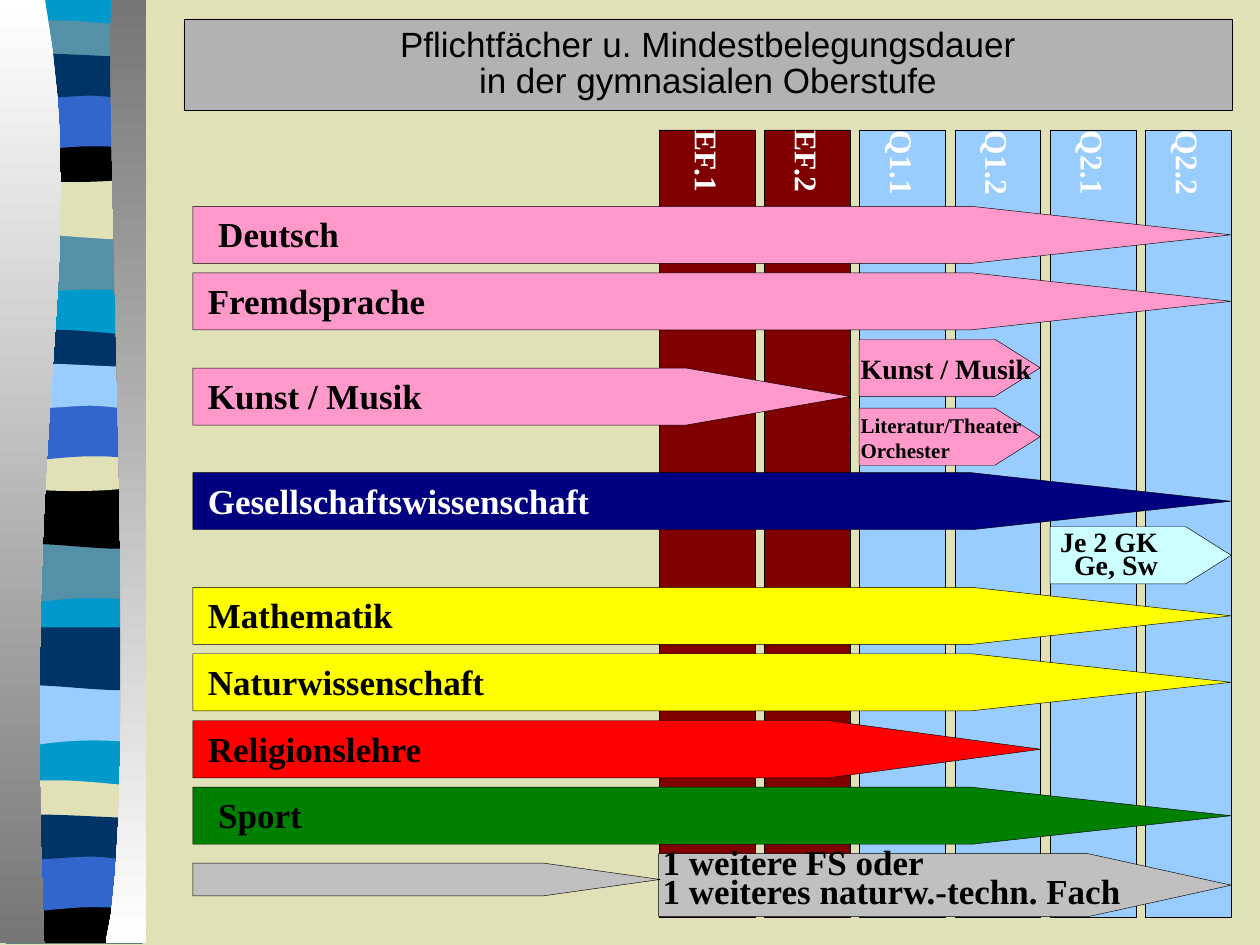
from dataclasses import dataclass

from pptx import Presentation
from pptx.dml.color import RGBColor
from pptx.enum.shapes import MSO_SHAPE
from pptx.enum.text import MSO_ANCHOR, PP_ALIGN
from pptx.util import Cm, Pt


@dataclass(frozen=True)
class Theme:
    sand: RGBColor = RGBColor.from_string("E1E1B7")
    steel: RGBColor = RGBColor.from_string("5490A8")
    cyan: RGBColor = RGBColor.from_string("0099CC")
    blue: RGBColor = RGBColor.from_string("3366CC")
    navy: RGBColor = RGBColor.from_string("003366")
    sky: RGBColor = RGBColor.from_string("99CCFF")
    dark_grey: RGBColor = RGBColor.from_string("767676")
    title_grey: RGBColor = RGBColor.from_string("B2B2B2")
    silver: RGBColor = RGBColor.from_string("C0C0C0")
    maroon: RGBColor = RGBColor.from_string("800000")
    pink: RGBColor = RGBColor.from_string("FF99CC")
    indigo: RGBColor = RGBColor.from_string("000080")
    yellow: RGBColor = RGBColor.from_string("FFFF00")
    red: RGBColor = RGBColor.from_string("FF0000")
    green: RGBColor = RGBColor.from_string("008000")
    ice: RGBColor = RGBColor.from_string("CCFFFF")
    black: RGBColor = RGBColor.from_string("000000")
    white: RGBColor = RGBColor.from_string("FFFFFF")
    label_size: Pt = Pt(20)
    column_size: Pt = Pt(18)
    note_size: Pt = Pt(16)
    small_size: Pt = Pt(12)
    sans: str = "Arial"
    serif: str = "Times New Roman"


theme = Theme()


def paint(shape, fill, outlined=True):
    shape.shadow.inherit = False
    shape.fill.solid()
    shape.fill.fore_color.rgb = fill
    if outlined:
        shape.line.color.rgb = theme.black
        shape.line.width = Pt(0.25)
    else:
        shape.line.fill.background()


def write(shape, lines, size, color=theme.black, font=theme.serif,
          align=PP_ALIGN.LEFT, spacing=1.0):
    """Fill the shape with one paragraph whose lines are split by line breaks."""
    frame = shape.text_frame
    frame.word_wrap = True
    frame.margin_left = frame.margin_right = Cm(0.13)
    frame.margin_top = frame.margin_bottom = Cm(0.13)
    paragraph = frame.paragraphs[0]
    paragraph.alignment = align
    paragraph.line_spacing = spacing
    for index, line in enumerate(lines):
        if index:
            paragraph.add_line_break()
        run = paragraph.add_run()
        run.text = line
        run.font.size = size
        run.font.name = font
        run.font.bold = font == theme.serif
        run.font.color.rgb = color


presentation = Presentation()
presentation.slide_width, presentation.slide_height = Cm(25.4), Cm(19.05)
slide = presentation.slides.add_slide(presentation.slide_layouts[6])
slide.background.fill.solid()
slide.background.fill.fore_color.rgb = theme.sand
shapes = slide.shapes

# Ribbon outlines: a start point, then lines (one point) and Bézier curves (three points)
swing = [[(2.75, 0)], [(2.75, 1.19)], [(0.84, 1), (0.46, 1.4), (0, 1.19)], [(0, 0)]]
sag = [[(2.75, 0)], [(2.75, 1.19)], [(2.29, 1.4), (0.84, 1.07), (0, 1.19)], [(0, 0)]]
arch = [[(2.75, 0.13)], [(2.75, 0.74)], [(2.29, 0.84), (0.46, 0.84), (0, 0.74)], [(0, 0.13)],
        [(0.18, 0), (0.61, 0), (1.07, 0)], [(1.52, 0), (2.39, 0.1), (2.75, 0.13)]]
bowl = [[(2.75, 0)], [(2.75, 0.81)], [(2.29, 0.97), (0.46, 0.97), (0, 0.81)], [(0, 0)],
        [(1.68, 0.13), (2.16, 0), (2.75, 0)]]
hump = [[(2.75, 0)], [(2.75, 1.19)], [(2.32, 1.07), (2.13, 1.07), (1.68, 1.07)],
        [(1.22, 1.07), (0.41, 1.19), (0, 1.19)], [(0, 0)]]
ripple = [[(2.75, 0.05)], [(2.75, 0.84)], [(2.57, 0.97), (2.16, 0.84), (1.7, 0.84)],
          [(1.24, 0.84), (0.28, 0.97), (0, 0.84)], [(0, 0.05)],
          [(0.38, -0.08), (1.88, 0.05), (2.34, 0.05)]]
foot = [[(2.75, 0)], [(2.75, 0.94)], [(0, 0.94)], [(0, 0)],
        [(1.68, 0.13), (2.16, 0), (2.75, 0)]]
left_edge = [[(0.91, 0)], [(1.83, 5.49), (0.43, 7.52), (0.89, 19.02)], [(0, 19.02)], [(0, 0)]]
right_edge = [[(2.24, 0)], [(2.13, 3.18), (2.82, 16.41), (2.13, 19.02)], [(2.95, 19.02)],
              [(2.95, 0)]]

ribbon = shapes.add_shape(MSO_SHAPE.RECTANGLE, Cm(0.12), 0, Cm(2.75), Cm(19.02))
paint(ribbon, theme.cyan, outlined=False)

# left, top, outline, colour, lower colour of a gradient
ribbon_parts = [
    (0.12, 4.7, swing, theme.steel, None),
    (0.12, 3.56, sag, theme.sand, None),
    (0.12, 0.41, arch, theme.steel, None),
    (0.12, 2.74, bowl, theme.black, None),
    (0.12, 1.88, hump, theme.blue, None),
    (0.12, 1.09, ripple, theme.navy, None),
    (0.12, 10.92, swing, theme.steel, None),
    (0.12, 9.8, sag, theme.black, None),
    (0.12, 6.65, arch, theme.navy, None),
    (0.12, 8.97, bowl, theme.sand, None),
    (0.12, 8.13, hump, theme.blue, None),
    (0.12, 7.34, ripple, theme.sky, None),
    (0.12, 13.79, swing, theme.sky, None),
    (0.12, 12.65, sag, theme.navy, None),
    (0.12, 15.73, arch, theme.sand, None),
    (0.12, 18.08, foot, theme.black, None),
    (0.12, 17.22, hump, theme.blue, None),
    (0.12, 16.43, ripple, theme.navy, None),
    (0, 0, left_edge, theme.white, theme.dark_grey),
    (0, 0, right_edge, theme.dark_grey, theme.white),
]
for left, top, outline, color, lower_color in ribbon_parts:
    points = list(outline[0])
    for segment in outline[1:]:
        if len(segment) == 1:
            points += segment
            continue
        controls = [points[-1], *segment]
        for step in range(1, 17):
            t = step / 16
            weights = ((1 - t) ** 3, 3 * t * (1 - t) ** 2, 3 * t * t * (1 - t), t ** 3)
            points.append(tuple(sum(weight * point[axis] for weight, point
                                    in zip(weights, controls)) for axis in (0, 1)))
    corners = [(Cm(left + x), Cm(top + y)) for x, y in points]
    builder = shapes.build_freeform(*corners[0])
    builder.add_line_segments(corners[1:], close=True)
    part = builder.convert_to_shape()
    paint(part, color, outlined=False)
    if lower_color is not None:
        part.fill.gradient()
        part.fill.gradient_angle = 270
        for stop, stop_color in zip(part.fill.gradient_stops, (color, lower_color)):
            stop.color.rgb = stop_color

title = shapes.add_shape(MSO_SHAPE.RECTANGLE, Cm(3.71), Cm(0.38), Cm(21.13), Cm(1.85))
paint(title, theme.title_grey)
title.text_frame.vertical_anchor = MSO_ANCHOR.MIDDLE
write(title, ["Pflichtfächer u. Mindestbelegungsdauer", "in der gymnasialen Oberstufe"],
      theme.label_size, font=theme.sans, align=PP_ALIGN.CENTER, spacing=0.85)

# Half-year columns
half_years = ["EF.1", "EF.2", "Q1.1", "Q1.2", "Q2.1", "Q2.2"]
column_right = 24.82
column_pitch = 1.92
label_length, label_height = 2.2, 0.97
for index, half_year in enumerate(half_years):
    width = 1.93 if index == 0 else 1.73
    left = column_right - column_pitch * (5 - index) - width
    column = shapes.add_shape(MSO_SHAPE.RECTANGLE, Cm(left), Cm(2.62), Cm(width), Cm(15.88))
    paint(column, theme.maroon if half_year.startswith("EF") else theme.sky)
    label = shapes.add_textbox(Cm(left + width / 2 + 0.03 - label_length / 2),
                               Cm(2.51 + (label_length - label_height) / 2),
                               Cm(label_length), Cm(label_height))
    label.rotation = 90
    write(label, [half_year], theme.column_size, theme.white)

# Subject arrows: left, top, width, height, colour
arrows = [
    (3.89, 4.16, 20.93, 1.15, theme.pink),
    (3.89, 5.5, 20.93, 1.15, theme.pink),
    (3.89, 7.42, 13.25, 1.15, theme.pink),
    (3.89, 9.53, 20.93, 1.15, theme.indigo),
    (3.89, 11.84, 20.93, 1.15, theme.yellow),
    (3.89, 13.18, 20.93, 1.15, theme.yellow),
    (3.89, 14.53, 17.09, 1.15, theme.red),
    (3.89, 15.87, 20.93, 1.15, theme.green),
    (17.32, 6.84, 3.65, 1.15, theme.pink),
    (17.32, 8.23, 3.65, 1.15, theme.pink),
    (21.17, 10.62, 3.65, 1.15, theme.ice),
    (13.28, 17.21, 11.54, 1.27, theme.silver),
    (3.89, 17.4, 9.42, 0.66, theme.silver),
]
for left, top, width, height, color in arrows:
    arrow = shapes.add_shape(MSO_SHAPE.PENTAGON, Cm(left), Cm(top), Cm(width), Cm(height))
    arrow.adjustments[0] = 0.25 * width / height  # the tip takes a quarter of the length
    paint(arrow, color)

subjects = ["Deutsch", "Fremdsprache", "Kunst / Musik", "Gesellschaftswissenschaft",
            "Mathematik", "Naturwissenschaft", "Religionslehre", "Sport"]
for subject, (_, top, _, _, color) in zip(subjects, arrows):
    left = 4.27 if subject in ("Deutsch", "Sport") else 4.06
    label = shapes.add_textbox(Cm(left), Cm(top), Cm(10.5), Cm(1.04))
    write(label, [subject], theme.label_size,
          theme.white if color == theme.indigo else theme.black)

# Notes: left, top, width, height, lines, size, alignment, line spacing
notes = [
    (17.22, 6.96, 3.84, 0.86, ["Kunst / Musik"], theme.note_size, PP_ALIGN.LEFT, 1.0),
    (17.22, 8.18, 3.66, 1.3, ["Literatur/Theater", "Orchester"], theme.small_size,
     PP_ALIGN.LEFT, 1.0),
    (21.16, 10.62, 2.31, 1.32, ["Je 2 GK", "Ge, Sw"], theme.note_size, PP_ALIGN.RIGHT, 0.7),
    (13.23, 17.04, 9.98, 1.6, ["1 weitere FS oder", "1 weiteres naturw.-techn. Fach"],
     theme.label_size, PP_ALIGN.LEFT, 0.7),
]
for left, top, width, height, lines, size, align, spacing in notes:
    note = shapes.add_textbox(Cm(left), Cm(top), Cm(width), Cm(height))
    write(note, lines, size, align=align, spacing=spacing)

presentation.save("out.pptx")
